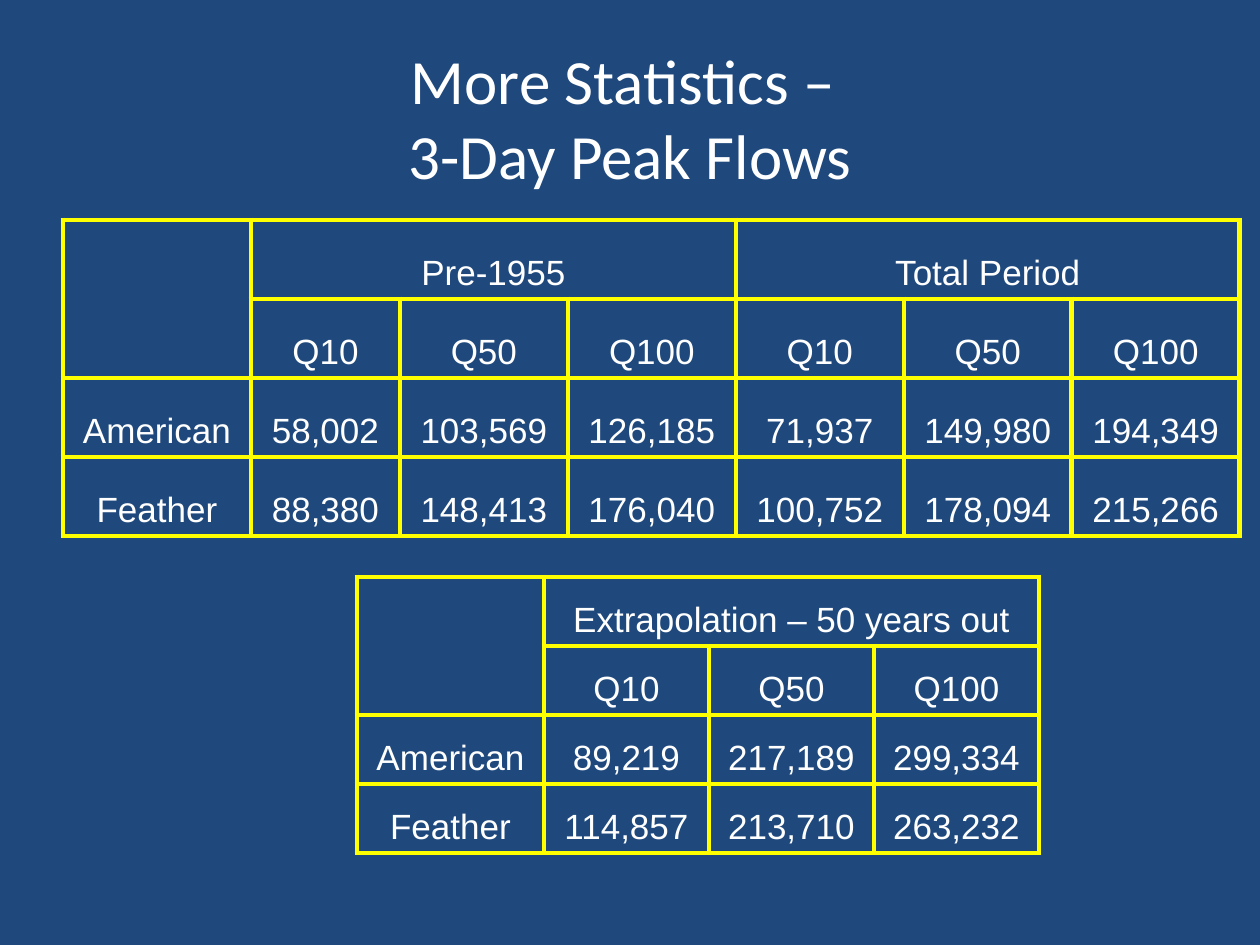
from lxml.etree import SubElement
from pptx import Presentation
from pptx.dml.color import RGBColor
from pptx.enum.text import MSO_ANCHOR, PP_ALIGN
from pptx.oxml.ns import qn
from pptx.util import Pt

EMU_PER_PX = 914400 / 126
NAVY = "1F497D"
YELLOW = "FFFF00"
WHITE = "FFFFFF"
QUANTILES = ["Q10", "Q50", "Q100"]


def px(length):
    return round(length * EMU_PER_PX)


def color(hex_value):
    return RGBColor.from_string(hex_value)


def write_text(text_frame, text, size=20, font="Arial", fill=WHITE):
    paragraph = text_frame.paragraphs[0]
    paragraph.text = text
    paragraph.alignment = PP_ALIGN.CENTER
    for run in paragraph.runs:
        run.font.size = Pt(size)
        run.font.name = font
        run.font.color.rgb = color(fill)
    for line_break in paragraph._p.findall(qn("a:br")):
        SubElement(line_break, qn("a:rPr"), sz=str(size * 100))


def add_borders(cell, line_color=YELLOW, width=3):
    properties = cell._tc.get_or_add_tcPr()
    for side in ("lnL", "lnR", "lnT", "lnB"):
        line = SubElement(properties, qn(f"a:{side}"), w=str(Pt(width)))
        fill = SubElement(line, qn("a:solidFill"))
        SubElement(fill, qn("a:srgbClr"), val=line_color)


def set_title(slide, text):
    title = slide.shapes.title
    title.left, title.top, title.width, title.height = map(px, (63, 38, 1134, 158))
    title.text_frame.word_wrap = True
    title.text_frame.vertical_anchor = MSO_ANCHOR.MIDDLE
    write_text(title.text_frame, text, size=36, font="Calibri")


def add_flow_table(slide, left, top, column_widths, row_height, periods, rivers):
    period_row = [""]
    for period in periods:
        period_row += [period, "", ""]
    rows = [period_row, [""] + QUANTILES * len(periods), *rivers]
    frame = slide.shapes.add_table(
        len(rows), len(column_widths), px(left), px(top),
        px(sum(column_widths)), px(row_height * len(rows)))
    table = frame.table
    table.first_row = False
    table.horz_banding = False
    for column, width in zip(table.columns, column_widths):
        column.width = px(width)
    for row, values in zip(table.rows, rows):
        row.height = px(row_height)
        for cell, value in zip(row.cells, values):
            add_borders(cell)
            cell.fill.background()
            cell.vertical_anchor = MSO_ANCHOR.BOTTOM
            write_text(cell.text_frame, value)
    table.cell(0, 0).merge(table.cell(1, 0))
    for index in range(len(periods)):
        first = 1 + index * len(QUANTILES)
        table.cell(0, first).merge(table.cell(0, first + len(QUANTILES) - 1))


def main():
    presentation = Presentation()
    presentation.slide_width = px(1260)
    presentation.slide_height = px(945)
    slide = presentation.slides.add_slide(presentation.slide_layouts[5])
    slide.background.fill.solid()
    slide.background.fill.fore_color.rgb = color(NAVY)

    set_title(slide, "More Statistics – \n3-Day Peak Flows")
    add_flow_table(
        slide, 63, 220, [188, 149] + [168] * 5, 79,
        ["Pre-1955", "Total Period"],
        [["American", "58,002", "103,569", "126,185", "71,937", "149,980", "194,349"],
         ["Feather", "88,380", "148,413", "176,040", "100,752", "178,094", "215,266"]])
    add_flow_table(
        slide, 357, 577, [187] + [165] * 3, 69,
        ["Extrapolation – 50 years out"],
        [["American", "89,219", "217,189", "299,334"],
         ["Feather", "114,857", "213,710", "263,232"]])
    presentation.save("out.pptx")


if __name__ == "__main__":
    main()
